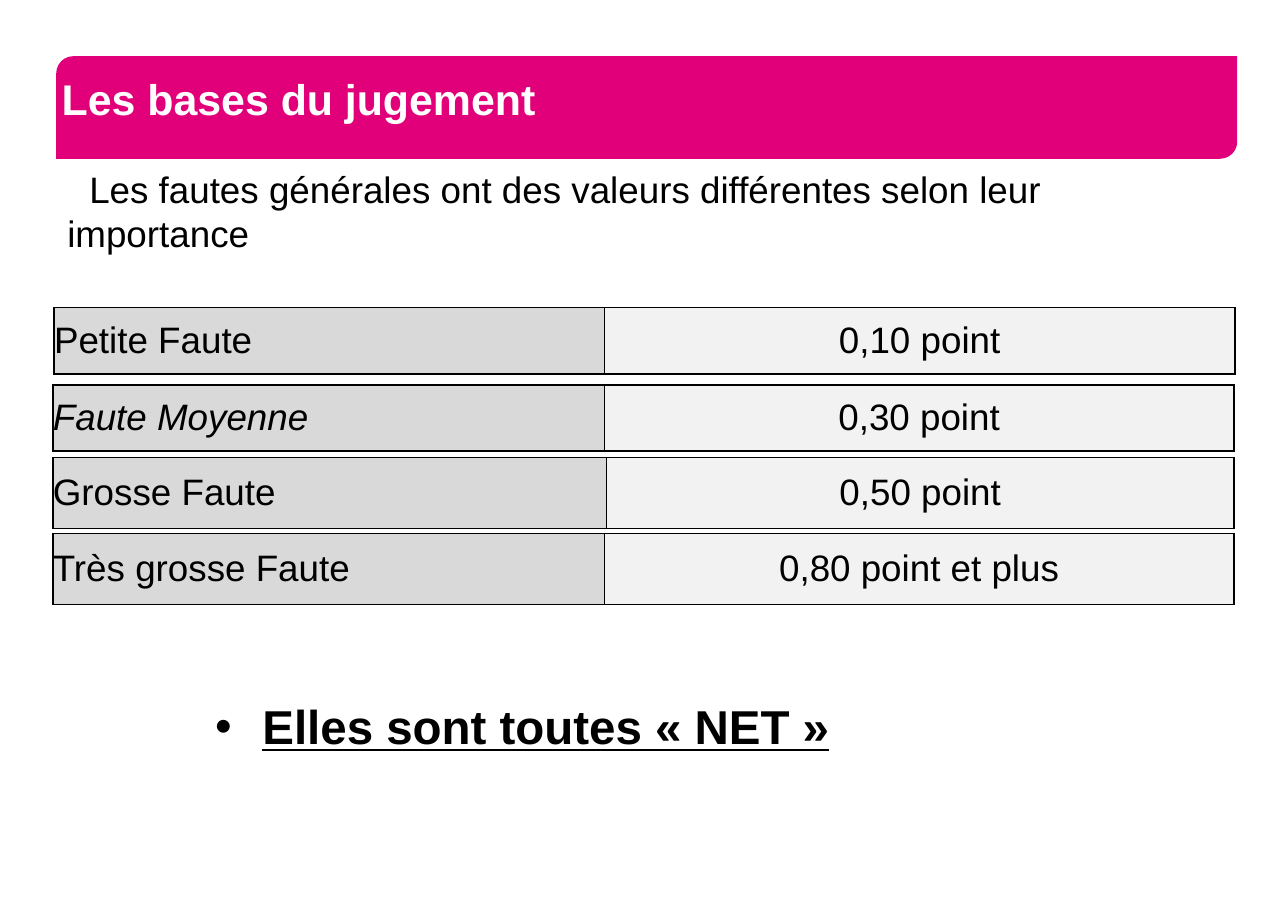
from dataclasses import dataclass

from lxml import etree
from pptx import Presentation
from pptx.dml.color import RGBColor
from pptx.enum.shapes import MSO_SHAPE
from pptx.enum.text import MSO_ANCHOR, MSO_AUTO_SIZE, PP_ALIGN
from pptx.oxml.ns import qn
from pptx.util import Inches, Pt

BANNER_SHAPE = MSO_SHAPE.ROUND_2_DIAG_RECTANGLE
MIDDLE, TOP = MSO_ANCHOR.MIDDLE, MSO_ANCHOR.TOP
LEFT, CENTER = PP_ALIGN.LEFT, PP_ALIGN.CENTER
NO_AUTOFIT = MSO_AUTO_SIZE.NONE
FONT = "Arial"
COLORS = {
    "banner": "E2007A",
    "title": "FFFFFF",
    "text": "000000",
    "border": "000000",
    "label": "D9D9D9",
    "value": "F2F2F2",
}
BANNER_BOX = (0.51, 0.51, 10.71, 0.93)
BODY_BOX = (0.56, 1.46, 10.61, 6.7)
TABLE_WIDTH = 10.71


@dataclass
class Fault:
    label: str
    value: str
    left: float
    top: float
    height: float
    label_width: float
    italic: bool = False


FAULTS = [
    Fault("Petite Faute", "0,10 point", 0.49, 2.79, 0.6, 4.99),
    Fault("Faute Moyenne", "0,30 point", 0.48, 3.49, 0.6, 5, italic=True),
    Fault("Grosse Faute", "0,50 point", 0.48, 4.15, 0.64, 5.02),
    Fault("Très grosse Faute", "0,80 point et plus", 0.48, 4.84, 0.64, 5),
]


def color(name: str) -> RGBColor:
    return RGBColor.from_string(COLORS[name])


def add_text(paragraph, text: str, size: float, color_name: str = "text",
             bold: bool = False, italic: bool = False, underline: bool = False) -> None:
    run = paragraph.add_run()
    run.text = text
    font = run.font
    font.name, font.size = FONT, Pt(size)
    font.bold, font.italic, font.underline = bold, italic, underline
    font.color.rgb = color(color_name)


def place(shape, box: tuple[float, float, float, float]) -> None:
    shape.left, shape.top, shape.width, shape.height = map(Inches, box)


def prepare_frame(shape, anchor: MSO_ANCHOR):
    frame = shape.text_frame
    frame.word_wrap = True
    frame.auto_size = NO_AUTOFIT
    frame.vertical_anchor = anchor
    frame.margin_left = frame.margin_right = Inches(0.05)
    frame.margin_top = frame.margin_bottom = Inches(0.05)
    return frame


def set_bullet(paragraph, margin: float, indent: float, character: str = "") -> None:
    properties = paragraph._p.get_or_add_pPr()
    properties.set("marL", str(Inches(margin)))
    properties.set("indent", str(Inches(indent)))
    if character:
        etree.SubElement(properties, qn("a:buFont"), typeface=FONT)
        etree.SubElement(properties, qn("a:buChar"), char=character)
    else:
        etree.SubElement(properties, qn("a:buNone"))


def add_banner(slide) -> None:
    banner = slide.shapes.add_shape(BANNER_SHAPE, *map(Inches, BANNER_BOX))
    banner.shadow.inherit = False
    banner.fill.solid()
    banner.fill.fore_color.rgb = color("banner")
    banner.line.fill.background()
    slide.shapes._spTree.insert(2, banner._element)


def fill_title(title) -> None:
    place(title, BANNER_BOX)
    paragraph = prepare_frame(title, MIDDLE).paragraphs[0]
    paragraph.alignment = LEFT
    paragraph.line_spacing = Pt(22)
    add_text(paragraph, "Les bases du jugement", 28, "title", bold=True)


def fill_body(body) -> None:
    place(body, BODY_BOX)
    frame = prepare_frame(body, TOP)
    introduction = frame.paragraphs[0]
    set_bullet(introduction, 0, 0.2)
    introduction.space_before = Pt(0)
    add_text(introduction,
             "Les fautes générales ont des valeurs différentes selon leur importance", 24)
    conclusion = frame.add_paragraph()
    set_bullet(conclusion, 1.77, -0.43, "•")
    conclusion.space_before = Pt(289)
    add_text(conclusion, "Elles sont toutes « NET »", 31, bold=True, underline=True)


def add_borders(cell) -> None:
    properties = cell._tc.get_or_add_tcPr()
    for index, side in enumerate(("a:lnL", "a:lnR", "a:lnT", "a:lnB")):
        line = etree.Element(qn(side), w=str(Pt(1)))
        fill = etree.SubElement(line, qn("a:solidFill"))
        etree.SubElement(fill, qn("a:srgbClr"), val=COLORS["border"])
        properties.insert(index, line)


def fill_cell(cell, text: str, fill: str, alignment: PP_ALIGN, italic: bool) -> None:
    cell.margin_left = cell.margin_right = cell.margin_top = cell.margin_bottom = 0
    cell.vertical_anchor = MIDDLE
    cell.fill.solid()
    cell.fill.fore_color.rgb = color(fill)
    add_borders(cell)
    paragraph = cell.text_frame.paragraphs[0]
    paragraph.alignment = alignment
    add_text(paragraph, text, 24, italic=italic)


def add_fault(slide, fault: Fault) -> None:
    box = (fault.left, fault.top, TABLE_WIDTH, fault.height)
    table = slide.shapes.add_table(1, 2, *map(Inches, box)).table
    table.first_row = table.horz_banding = False
    table.columns[0].width = Inches(fault.label_width)
    table.columns[1].width = Inches(TABLE_WIDTH - fault.label_width)
    fill_cell(table.cell(0, 0), fault.label, "label", LEFT, fault.italic)
    fill_cell(table.cell(0, 1), fault.value, "value", CENTER, False)


def main() -> None:
    presentation = Presentation()
    presentation.slide_width = Inches(11.68)
    presentation.slide_height = Inches(8.26)
    slide = presentation.slides.add_slide(presentation.slide_layouts[1])
    add_banner(slide)
    fill_title(slide.shapes.title)
    fill_body(slide.placeholders[1])
    for fault in FAULTS:
        add_fault(slide, fault)
    presentation.save("out.pptx")


if __name__ == "__main__":
    main()
